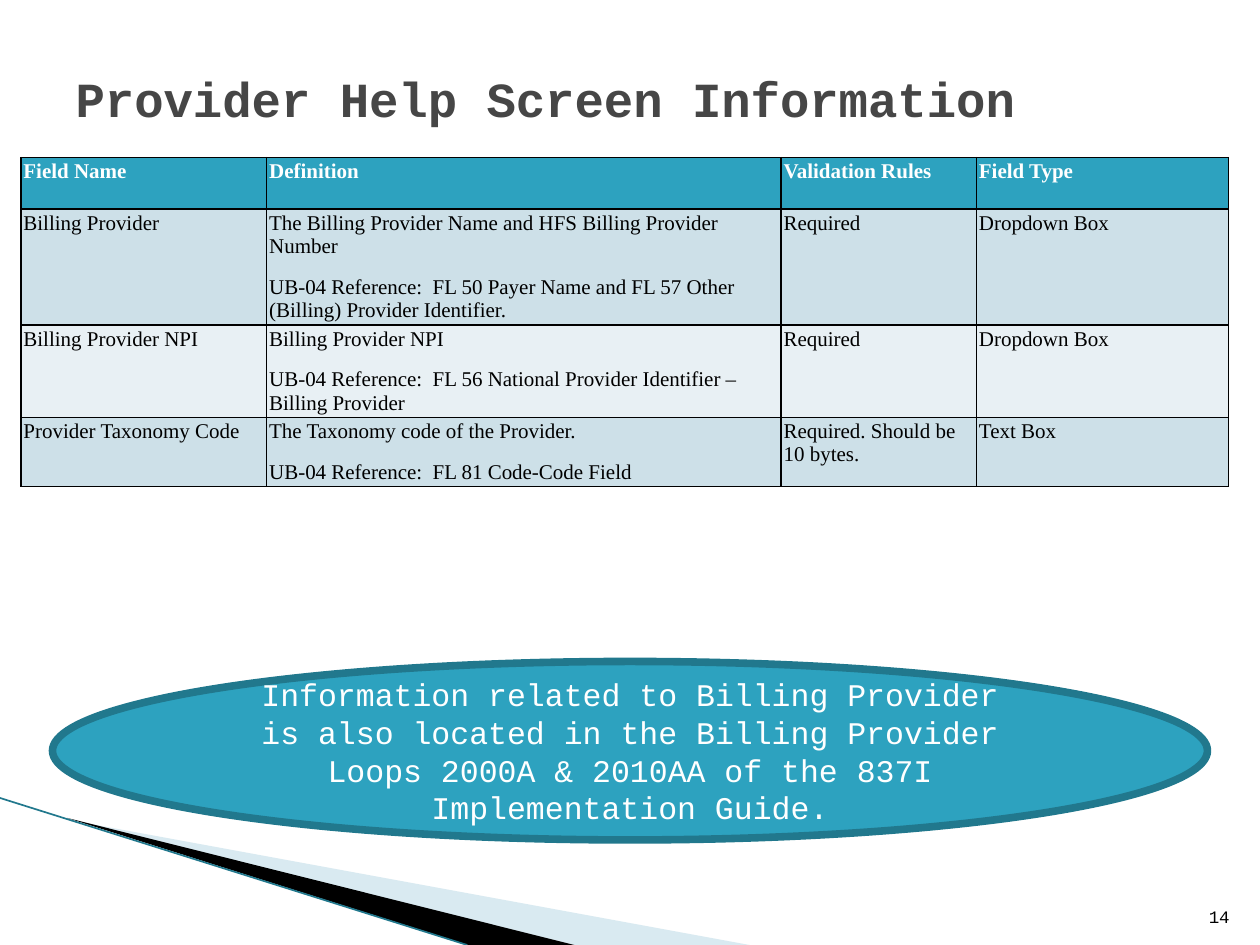
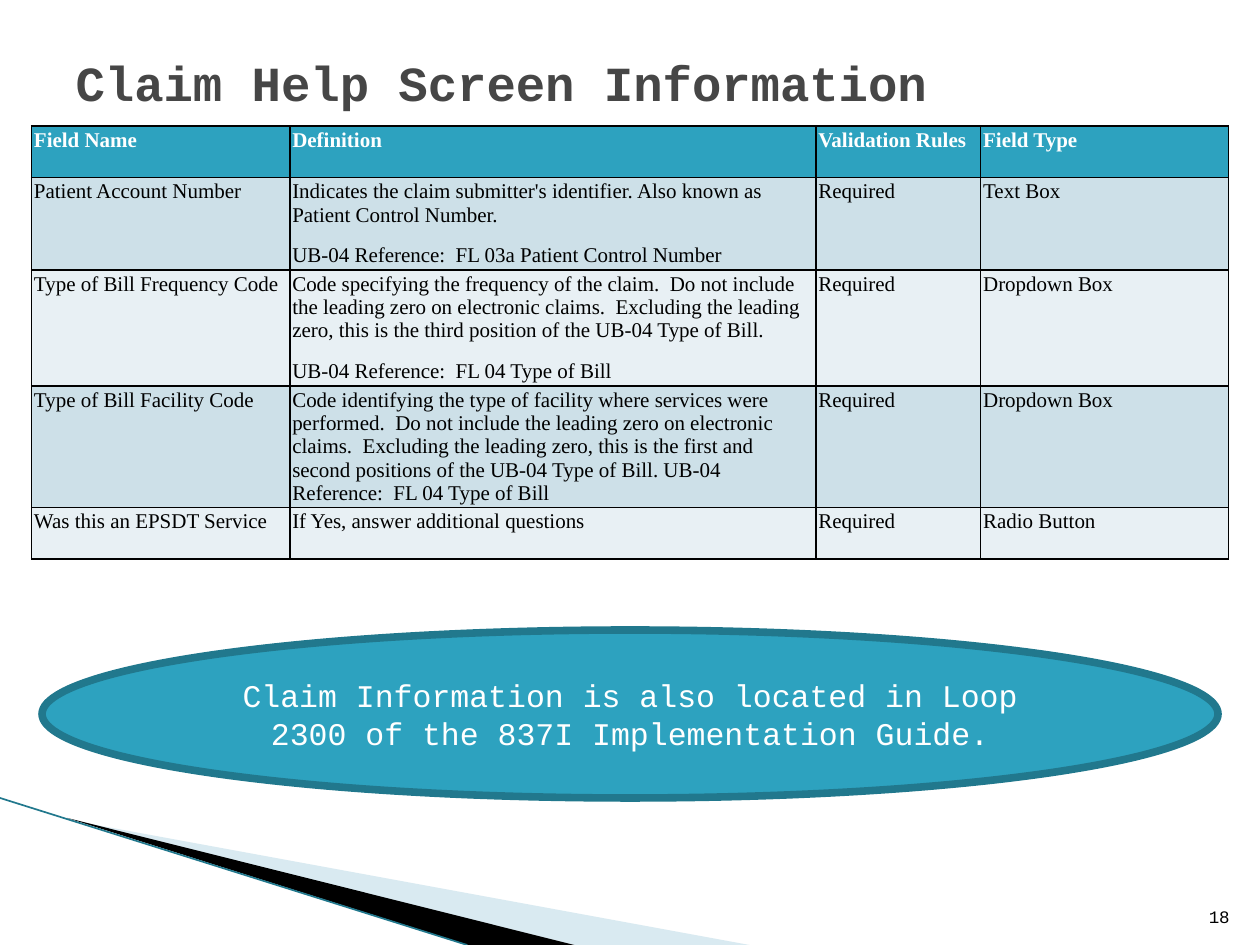
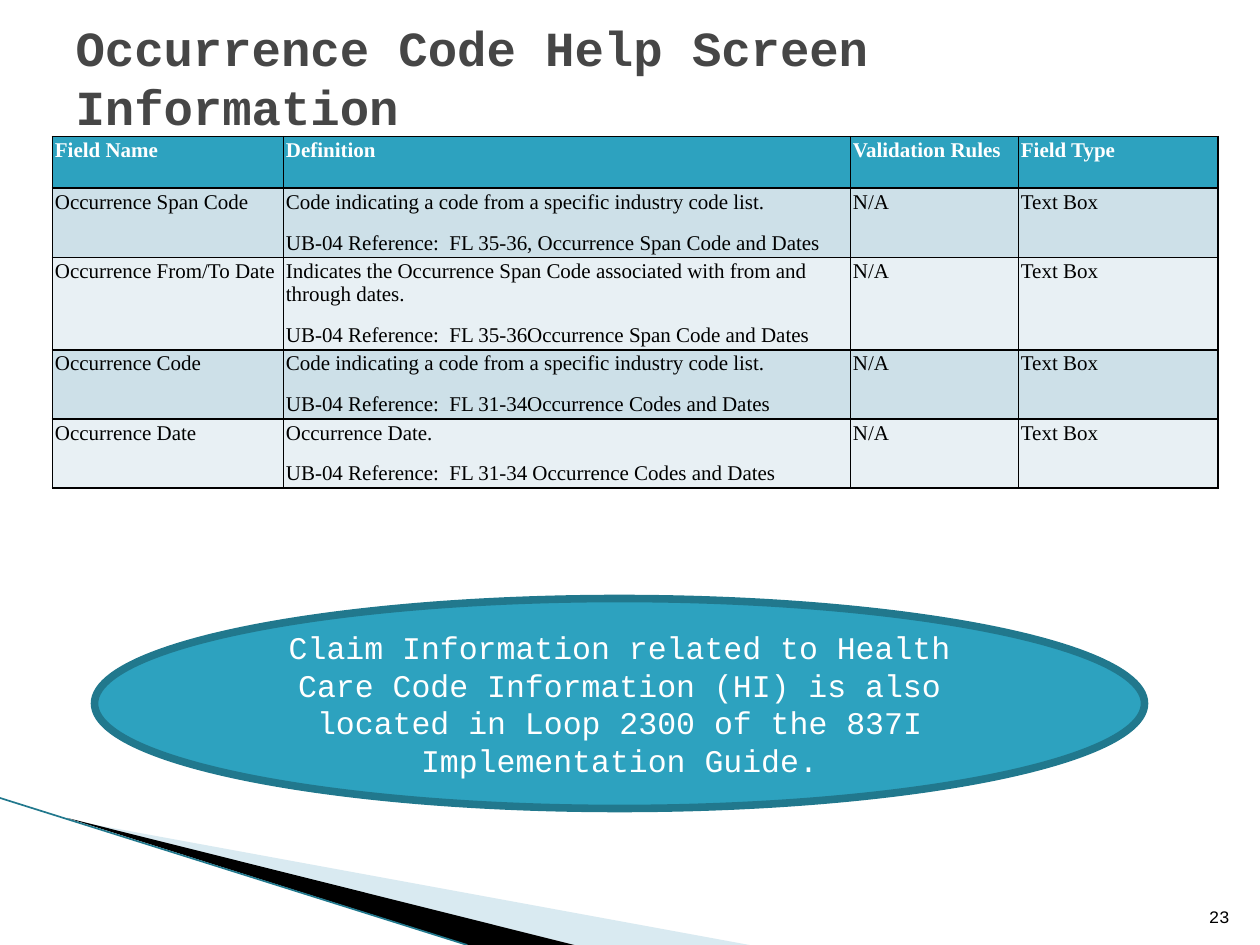
from lxml import etree
from pptx import Presentation, util as u
from pptx.dml.color import RGBColor
from pptx.enum import shapes, text
from pptx.oxml.ns import qn

# Slide grid: 120 columns by 90 rows, square cells
CELL = u.Inches(10) / 120
COLUMNS, ROWS = 120, 90

TEAL, DARK_TEAL, PALE_TEAL = "2DA2BF", "21788D", "A0CBDC"
BLACK, WHITE, TITLE_GRAY = "000000", "FFFFFF", "464646"
BANDS = ("CDE0E8", "E8F0F4")
MONO, SERIF = "Courier New", "Times New Roman"
HEADER = ("Field Name", "Definition", "Validation Rules", "Field Type")
ROW_HEIGHT = 4.92
TITLE_LEFT, TITLE_TOP, TITLE_WIDTH = 6, 3.6, 108
NUMBER_BOX = (113.5, 84.1, 4.8, 4.8)


def cells(*counts):
    return [u.Emu(round(count * CELL)) for count in counts]


def color(value):
    return RGBColor.from_string(value)


def style(para, face, size, ink, bold=False, align=None):
    para.font.name = face
    para.font.size = u.Pt(size)
    para.font.color.rgb = color(ink)
    para.font.bold = bold
    para.alignment = align


def fill(target, value):
    target.fill.solid()
    target.fill.fore_color.rgb = color(value)


# Corner band
def add_wedge(page, points, value, opacity=100):
    corners = [cells(*point) for point in points]
    builder = page.shapes.build_freeform(*corners[0])
    builder.add_line_segments(corners[1:], close=True)
    wedge = builder.convert_to_shape()
    wedge.shadow.inherit = False
    wedge.line.fill.background()
    fill(wedge, value)
    if opacity < 100:
        tint = wedge._element.spPr.find(".//" + qn("a:srgbClr"))
        etree.SubElement(tint, qn("a:alpha"), val=str(opacity * 1000))


def add_corner_band(page):
    add_wedge(page, [(6.6, 78.1), (71.4, ROWS), (54.7, ROWS)], PALE_TEAL, 40)
    add_wedge(page, [(6.4, 77.9), (54.7, ROWS), (44.6, ROWS)], BLACK)
    edge = page.shapes.add_connector(
        shapes.MSO_CONNECTOR.STRAIGHT, *cells(0, 76, 44.5, ROWS))
    edge.line.color.rgb = color(DARK_TEAL)
    edge.line.width = u.Pt(0.95)
    etree.SubElement(edge._element.spPr, qn("a:effectLst"))


# Title and page number
def add_title(page, words, height):
    title = page.shapes.title
    title.left, title.top, title.width, title.height = cells(
        TITLE_LEFT, TITLE_TOP, TITLE_WIDTH, height)
    frame = title.text_frame
    frame.text = words
    frame.word_wrap = True
    frame.auto_size = text.MSO_AUTO_SIZE.NONE
    frame.vertical_anchor = text.MSO_ANCHOR.MIDDLE
    style(frame.paragraphs[0], MONO, 28, TITLE_GRAY, True, text.PP_ALIGN.LEFT)


def add_number(page, number):
    frame = page.shapes.add_textbox(*cells(*NUMBER_BOX)).text_frame
    frame.word_wrap = True
    frame.vertical_anchor = text.MSO_ANCHOR.BOTTOM
    frame.text = str(number)
    style(frame.paragraphs[0], MONO, 10, BLACK, align=text.PP_ALIGN.RIGHT)


# Field table
def add_borders(cell):
    props = cell._tc.get_or_add_tcPr()
    for position, side in enumerate(("a:lnL", "a:lnR", "a:lnT", "a:lnB")):
        border = etree.Element(qn(side), w=str(u.Pt(1)))
        paint = etree.SubElement(border, qn("a:solidFill"))
        etree.SubElement(paint, qn("a:srgbClr"), val=BLACK)
        props.insert(position, border)


def fill_cell(cell, words, back, ink, bold):
    cell.margin_left = cell.margin_right = u.Inches(0.02)
    cell.margin_top = cell.margin_bottom = u.Inches(0.02)
    cell.text = words
    for para in cell.text_frame.paragraphs:
        para.space_after = u.Pt(10)
        style(para, SERIF, 12, ink, bold)
    fill(cell, back)
    add_borders(cell)


def add_field_table(page, left, top, widths, fields):
    records = [HEADER, *fields]
    table = page.shapes.add_table(
        len(records), len(widths),
        *cells(left, top, sum(widths), ROW_HEIGHT * len(records))).table
    for column, width in zip(table.columns, cells(*widths)):
        column.width = width
    for index, record in enumerate(records):
        if index == 0:
            look = (TEAL, WHITE, True)
        else:
            look = (BANDS[(index - 1) % 2], BLACK, False)
        for cell, words in zip(table.rows[index].cells, record):
            fill_cell(cell, words, *look)


# Callout
def add_callout(page, box, words):
    oval = page.shapes.add_shape(shapes.MSO_SHAPE.OVAL, *cells(*box))
    oval.shadow.inherit = False
    fill(oval, TEAL)
    oval.line.color.rgb = color(DARK_TEAL)
    oval.line.width = u.Pt(4.33)
    frame = oval.text_frame
    frame.word_wrap = True
    frame.vertical_anchor = text.MSO_ANCHOR.MIDDLE
    frame.text = words
    style(frame.paragraphs[0], MONO, 18, WHITE, align=text.PP_ALIGN.CENTER)


def add_help_page(deck, number, title, title_height, table, callout):
    page = deck.slides.add_slide(deck.slide_layouts.get_by_name("Title Only"))
    add_corner_band(page)
    add_field_table(page, *table)
    add_number(page, number)
    add_title(page, title, title_height)
    add_callout(page, *callout)


PROVIDER_FIELDS = [
    ("Billing Provider",
     "The Billing Provider Name and HFS Billing Provider Number\n"
     "UB-04 Reference:  FL 50 Payer Name and FL 57 Other (Billing) "
     "Provider Identifier.",
     "Required", "Dropdown Box"),
    ("Billing Provider NPI",
     "Billing Provider NPI\n"
     "UB-04 Reference:  FL 56 National Provider Identifier – Billing Provider",
     "Required", "Dropdown Box"),
    ("Provider Taxonomy Code",
     "The Taxonomy code of the Provider.\n"
     "UB-04 Reference:  FL 81 Code-Code Field",
     "Required. Should be 10 bytes.", "Text Box"),
]

CLAIM_FIELDS = [
    ("Patient Account Number",
     "Indicates the claim submitter's identifier. Also known as Patient "
     "Control Number.\n"
     "UB-04 Reference:  FL 03a Patient Control Number",
     "Required", "Text Box"),
    ("Type of Bill Frequency Code",
     "Code specifying the frequency of the claim.  Do not include the leading "
     "zero on electronic claims.  Excluding the leading zero, this is the "
     "third position of the UB-04 Type of Bill.\n"
     "UB-04 Reference:  FL 04 Type of Bill",
     "Required", "Dropdown Box"),
    ("Type of Bill Facility Code",
     "Code identifying the type of facility where services were performed.  "
     "Do not include the leading zero on electronic claims.  Excluding the "
     "leading zero, this is the first and second positions of the UB-04 Type "
     "of Bill. UB-04 Reference:  FL 04 Type of Bill",
     "Required", "Dropdown Box"),
    ("Was this an EPSDT Service", "If Yes, answer additional questions",
     "Required", "Radio Button"),
]

OCCURRENCE_FIELDS = [
    ("Occurrence Span Code",
     "Code indicating a code from a specific industry code list.\n"
     "UB-04 Reference:  FL 35-36, Occurrence Span Code and Dates",
     "N/A", "Text Box"),
    ("Occurrence From/To Date",
     "Indicates the Occurrence Span Code associated with from and through "
     "dates.\n"
     "UB-04 Reference:  FL 35-36Occurrence Span Code and Dates",
     "N/A", "Text Box"),
    ("Occurrence Code",
     "Code indicating a code from a specific industry code list.\n"
     "UB-04 Reference:  FL 31-34Occurrence Codes and Dates",
     "N/A", "Text Box"),
    ("Occurrence Date",
     "Occurrence Date.\n"
     "UB-04 Reference:  FL 31-34 Occurrence Codes and Dates",
     "N/A", "Text Box"),
]


def main():
    deck = Presentation()
    deck.slide_width, deck.slide_height = cells(COLUMNS, ROWS)
    add_help_page(
        deck, 14, "Provider Help Screen Information", 11.4,
        (2, 15, (23.4, 49, 18.6, 24), PROVIDER_FIELDS),
        ((5, 63, 110, 17),
         "Information related to Billing Provider is also located in the "
         "Billing Provider Loops 2000A & 2010AA of the 837I Implementation "
         "Guide."))
    add_help_page(
        deck, 18, "Claim Help Screen Information", 8.4,
        (3, 12, (24.6, 50.1, 15.7, 23.6), CLAIM_FIELDS),
        ((4, 60, 112, 16),
         "Claim Information is also located in Loop 2300 of the 837I "
         "Implementation Guide."))
    add_help_page(
        deck, 23, "Occurrence Code Help Screen Information", 7.4,
        (5, 13, (22, 54, 16, 19), OCCURRENCE_FIELDS),
        ((9, 57, 100, 20),
         "Claim Information related to Health Care Code Information (HI) is "
         "also located in Loop 2300 of the 837I Implementation Guide."))
    deck.save("out.pptx")


if __name__ == "__main__":
    main()
